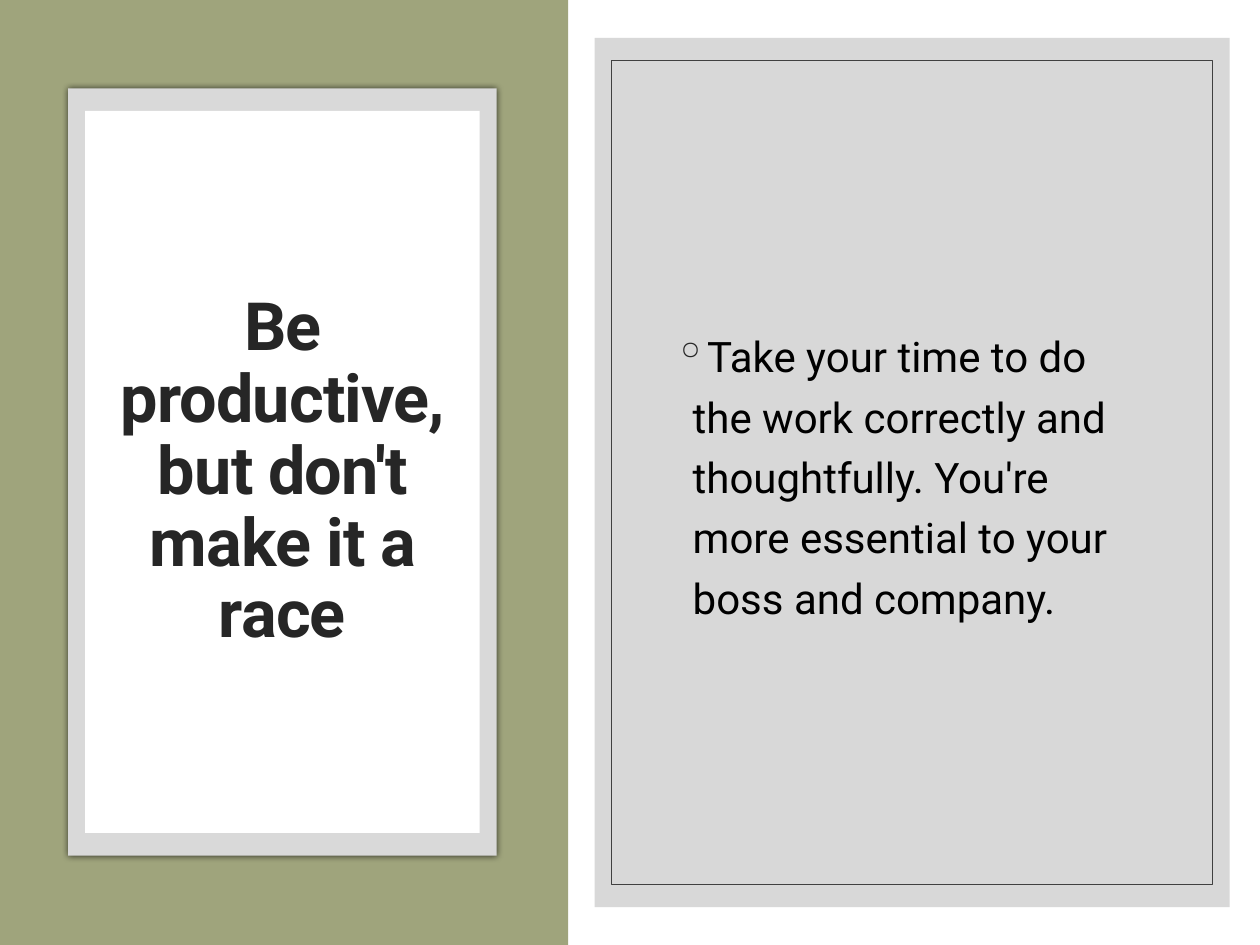
from lxml import etree
from pptx import Presentation, util as u
from pptx.dml.color import RGBColor
from pptx.enum import shapes, text
from pptx.oxml import parse_xml
from pptx.oxml.ns import nsdecls, qn

WHITE = RGBColor(0xFF, 0xFF, 0xFF)
SAGE = RGBColor(0x9F, 0xA4, 0x7C)
MAT = RGBColor(0xD9, 0xD9, 0xD9)
PANEL = RGBColor(0xBF, 0xBF, 0xBF)
RULE = RGBColor(0x40, 0x40, 0x40)
INK = RGBColor(0x26, 0x26, 0x26)
BLACK = RGBColor(0, 0, 0)
FONT = "Roboto"
W, H = 10, 7.5


def part(box, left, top, width, height):
    """Return the box lying at the given shares of another box."""
    x, y, w, h = box
    return x + w * left, y + h * top, w * width, h * height


def inset(box, dx, dy):
    x, y, w, h = box
    return x + dx, y + dy, w - 2 * dx, h - 2 * dy


def add_rect(s, box, fill=None, line=None):
    sp = s.shapes.add_shape(shapes.MSO_SHAPE.RECTANGLE, *map(u.Inches, box))
    sp.shadow.inherit = False
    if fill is None:
        sp.fill.background()
    else:
        sp.fill.solid()
        sp.fill.fore_color.rgb = fill
    if line is None:
        sp.line.fill.background()
    else:
        sp.line.color.rgb = line
        sp.line.width = u.Pt(0.5)
    return sp


def add_text(s, box, words, size, color, spacing):
    """Add one vertically centred paragraph and return it."""
    tf = s.shapes.add_textbox(*map(u.Inches, box)).text_frame
    tf.word_wrap = True
    tf.vertical_anchor = text.MSO_ANCHOR.MIDDLE
    tf.text = words
    p = tf.paragraphs[0]
    p.line_spacing = spacing
    font = p.runs[0].font
    font.name, font.size, font.color.rgb = FONT, u.Pt(size), color
    return p


def add_glow(sp):
    """Give a shape a soft shadow on all sides."""
    effects = sp._element.spPr.find(qn("a:effectLst"))
    effects.append(parse_xml(
        f'<a:outerShdw {nsdecls("a")} blurRad="{u.Pt(4)}" dist="0" dir="0" '
        'algn="ctr" rotWithShape="0"><a:srgbClr val="000000">'
        '<a:alpha val="66000"/></a:srgbClr></a:outerShdw>'))


def set_alpha(sp, percent):
    color = sp._element.spPr.find(qn("a:solidFill"))[0]
    etree.SubElement(color, qn("a:alpha")).set("val", str(percent * 1000))


def set_bullet(p, char, color, indent):
    pPr = p._p.get_or_add_pPr()
    pPr.set("marL", str(u.Inches(indent)))
    pPr.set("indent", str(-u.Inches(indent)))
    bu_color = etree.SubElement(pPr, qn("a:buClr"))
    etree.SubElement(bu_color, qn("a:srgbClr")).set("val", str(color))
    etree.SubElement(pPr, qn("a:buChar")).set("char", char)


def title_side(s, box):
    # Coloured band with a matted card
    add_rect(s, box, SAGE)
    card = part(box, 0.12, 0.0935, 0.754, 0.812)
    add_glow(add_rect(s, card, MAT))
    add_rect(s, inset(card, 0.135, 0.18), WHITE)

    # Title
    p = add_text(s, part(card, 0.08, 0.098, 0.84, 0.806),
                 "Be productive, but don't make it a race", 38, INK, 0.9)
    p.alignment = text.PP_ALIGN.CENTER
    r = p.runs[0]
    r.font.bold = True
    r.font._element.set("spc", "-50")


def body_side(s, box):
    # Translucent panel with a thin inner frame
    set_alpha(add_rect(s, box, PANEL), 60)
    add_rect(s, inset(box, 0.135, 0.18), line=RULE)

    # Advice
    p = add_text(s, part(box, 0.105, 0.104, 0.792, 0.79),
                 "Take your time to do the work correctly and thoughtfully. "
                 "You're more essential to your boss and company.",
                 24, BLACK, 1.2)
    set_bullet(p, "◦", INK, 0.15)


def main():
    prs = Presentation()
    prs.slide_width, prs.slide_height = u.Inches(W), u.Inches(H)
    s = prs.slides.add_slide(prs.slide_layouts[6])
    page = (0, 0, W, H)
    add_rect(s, page, WHITE)
    title_side(s, part(page, 0, 0, 0.451, 1))
    body_side(s, part(page, 0.472, 0.04, 0.504, 0.92))
    prs.save("out.pptx")


if __name__ == "__main__":
    main()
